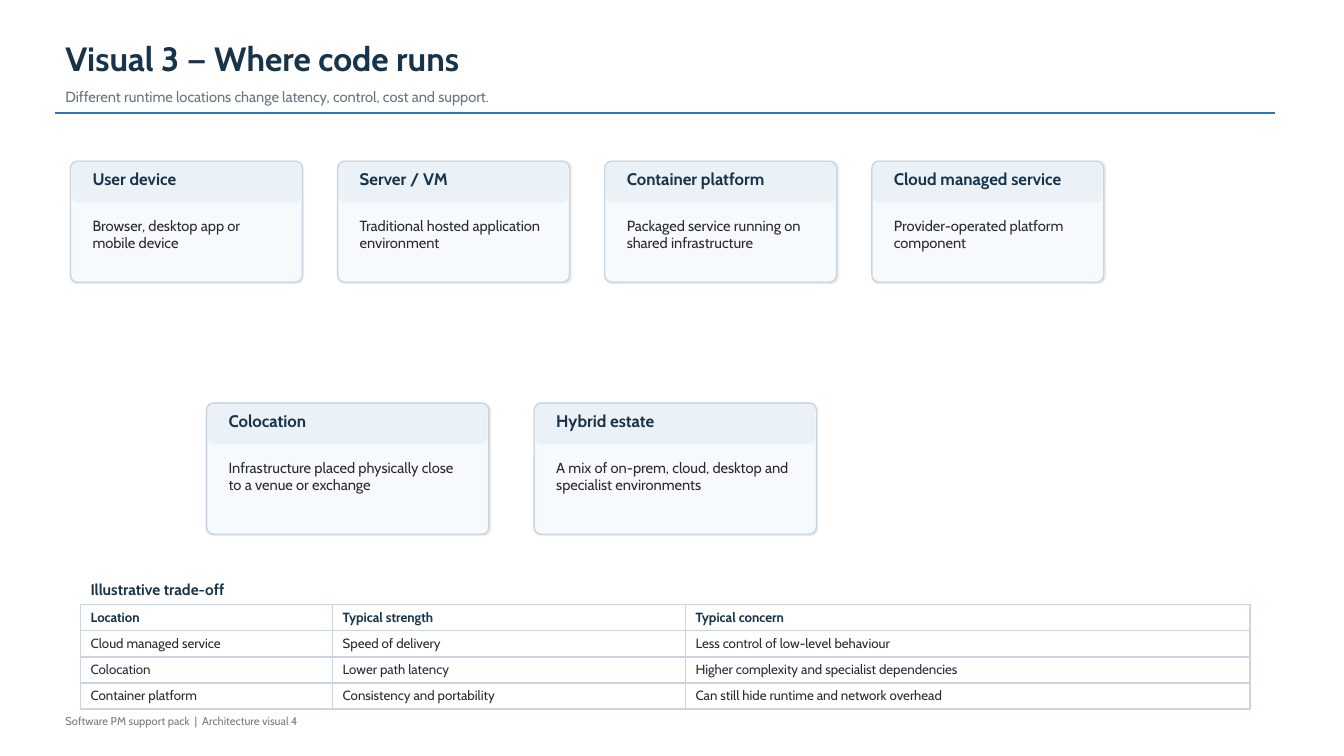
from lxml import etree
from pptx import Presentation
from pptx import util as u
from pptx.dml.color import RGBColor
from pptx.enum import shapes, text
from pptx.oxml import ns, parse_xml

NAVY = RGBColor(0x18, 0x34, 0x4A)
INK = RGBColor(0x2B, 0x2B, 0x2B)
SLATE = RGBColor(0x6B, 0x72, 0x80)
GREY = RGBColor(0x7A, 0x7A, 0x7A)
BLUE = RGBColor(0x2F, 0x75, 0xB5)
EDGE = RGBColor(0xC9, 0xD5, 0xE2)
BAND = RGBColor(0xEA, 0xF1, 0xF7)
PANEL = RGBColor(0xF7, 0xFA, 0xFC)
WHITE = RGBColor(0xFF, 0xFF, 0xFF)

FORMATS = {
    "title": ({"size": u.Pt(24), "bold": True}, NAVY),
    "subtitle": ({"size": u.Pt(10.5)}, SLATE),
    "card title": ({"size": u.Pt(12), "bold": True}, NAVY),
    "card body": ({"size": u.Pt(10.5)}, INK),
    "table title": ({"size": u.Pt(11), "bold": True}, NAVY),
    "table head": ({"size": u.Pt(9.5), "bold": True}, NAVY),
    "table body": ({"size": u.Pt(9.5), "bold": False}, INK),
    "footer": ({"size": u.Pt(8)}, GREY),
}

LOCATIONS = [
    ("User device", "Browser, desktop app or mobile device"),
    ("Server / VM", "Traditional hosted application environment"),
    ("Container platform", "Packaged service running on shared infrastructure"),
    ("Cloud managed service", "Provider-operated platform component"),
]
ESTATES = [
    ("Colocation", "Infrastructure placed physically close to a venue or exchange"),
    ("Hybrid estate", "A mix of on-prem, cloud, desktop and specialist environments"),
]
TRADE_OFFS = [
    ("Location", "Typical strength", "Typical concern"),
    ("Cloud managed service", "Speed of delivery", "Less control of low-level behaviour"),
    ("Colocation", "Lower path latency", "Higher complexity and specialist dependencies"),
    ("Container platform", "Consistency and portability", "Can still hide runtime and network overhead"),
]


def grid(*steps):
    return [u.Inches(step / 10) for step in steps]


def write(frame, words, style):
    attributes, color = FORMATS[style]
    paragraph = frame.paragraphs[0]
    run = paragraph.add_run()
    run.text = words
    for name, value in {"name": "Cabin", **attributes}.items():
        setattr(run.font, name, value)
    run.font.color.rgb = color


def add_text(slide, box, words, style, anchor=text.MSO_ANCHOR.MIDDLE):
    frame = slide.shapes.add_textbox(*grid(*box)).text_frame
    frame.word_wrap = True
    frame.vertical_anchor = anchor
    write(frame, words, style)


def add_panel(slide, box, radius, fill, line):
    shape = slide.shapes.add_shape(shapes.MSO_SHAPE.ROUNDED_RECTANGLE, *grid(*box))
    shape.adjustments[0] = radius / box[3]
    shape.shadow.inherit = False
    shape.fill.solid()
    shape.fill.fore_color.rgb = fill
    shape.line.color.rgb = line
    shape.line.width = u.Pt(1)
    return shape


def add_shadow(shape):
    effects = shape._element.spPr.find(ns.qn("a:effectLst"))
    effects.append(parse_xml(
        f'<a:outerShdw {ns.nsdecls("a")} blurRad="{u.Pt(1)}" dist="{u.Pt(0.5)}" '
        'dir="2700000" algn="ctr" rotWithShape="0"><a:srgbClr val="000000">'
        '<a:alpha val="10000"/></a:srgbClr></a:outerShdw>'))


def add_header(slide, box, title, subtitle):
    left, top, width, height = box
    add_text(slide, (left, top, 98, 4.5), title, "title")
    add_text(slide, (left, top + 4.7, width - 1, 2.8), subtitle, "subtitle")
    bottom = top + height
    rule = slide.shapes.add_connector(
        shapes.MSO_CONNECTOR.STRAIGHT, *grid(left, bottom, left + width, bottom))
    rule.line.color.rgb = BLUE
    rule.line.width = u.Pt(1)
    etree.SubElement(rule._element.spPr, ns.qn("a:effectLst"))


def add_card(slide, box, title, body):
    left, top, width, height = box
    add_shadow(add_panel(slide, box, 0.7, PANEL, EDGE))
    add_panel(slide, (left + 0.2, top + 0.2, width - 0.4, 3.8), 0.5, BAND, BAND)
    inner_left, inner_width = left + 1.2, width - 2.4
    add_text(slide, (inner_left, top + 0.8, inner_width, 1.8), title, "card title")
    add_text(slide, (inner_left, top + 5, inner_width, height - 6), body,
             "card body", text.MSO_ANCHOR.TOP)


def add_card_row(slide, box, gap, cards):
    left, top, width, height = box
    for index, (title, body) in enumerate(cards):
        card_left = left + index * (width + gap)
        add_card(slide, (card_left, top, width, height), title, body)


def add_borders(cell):
    properties = cell._tc.get_or_add_tcPr()
    for side in ("lnL", "lnR", "lnT", "lnB"):
        properties.append(parse_xml(
            f'<a:{side} {ns.nsdecls("a")} w="{u.Pt(1)}"><a:solidFill>'
            f'<a:srgbClr val="{EDGE}"/></a:solidFill></a:{side}>'))


def add_trade_off_table(slide, box, title, rows, columns):
    left, top, width, height = box
    add_text(slide, (left, top - 2.5, 25, 2), title, "table title")
    table = slide.shapes.add_table(len(rows), len(columns), *grid(*box)).table
    for flag in ("first_row", "horz_banding"):
        setattr(table, flag, False)
    for column, share in zip(table.columns, columns):
        column.width = grid(width * share / sum(columns))[0]
    for row_index, row in enumerate(rows):
        table.rows[row_index].height = grid(height / len(rows))[0]
        for column_index, words in enumerate(row):
            cell = table.cell(row_index, column_index)
            add_borders(cell)
            cell.fill.solid()
            cell.fill.fore_color.rgb = WHITE
            write(cell.text_frame, words, "table body" if row_index else "table head")


def main():
    presentation = Presentation()
    presentation.slide_width, presentation.slide_height = grid(133.33, 75)
    slide = presentation.slides.add_slide(presentation.slide_layouts[6])
    add_header(slide, (5.5, 3.5, 121, 7.7), "Visual 3 — Where code runs",
               "Different runtime locations change latency, control, cost and support.")
    add_card_row(slide, (7, 16, 23, 12), 3.5, LOCATIONS)
    add_card_row(slide, (20.5, 40, 28, 13), 4.5, ESTATES)
    add_trade_off_table(slide, (8, 60, 116, 10), "Illustrative trade-off",
                        TRADE_OFFS, (25, 35, 56))
    add_text(slide, (5.5, 70.5, 40, 2),
             "Software PM support pack  |  Architecture visual 4", "footer")
    presentation.save("out.pptx")


if __name__ == "__main__":
    main()
